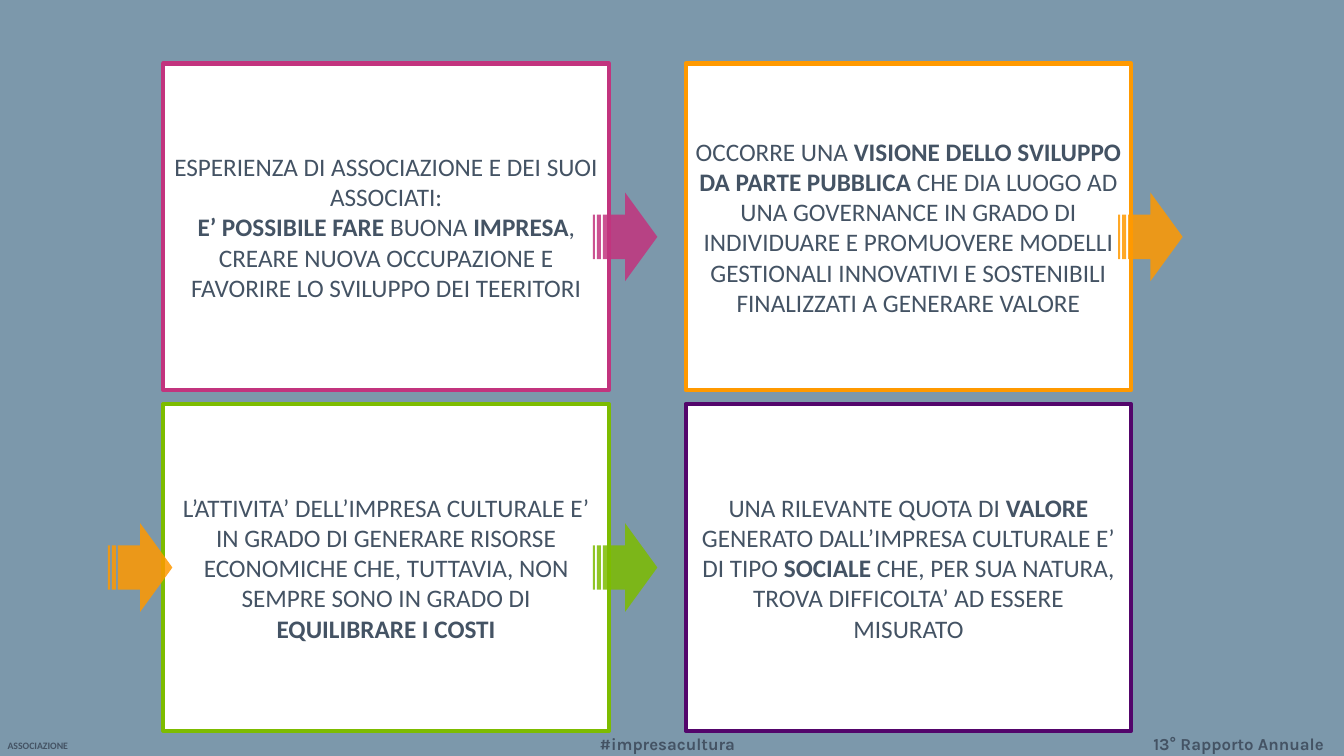
from lxml.etree import SubElement
from pptx import Presentation
from pptx.dml.color import RGBColor
from pptx.enum.shapes import MSO_SHAPE
from pptx.enum.text import MSO_ANCHOR, MSO_AUTO_SIZE, PP_ALIGN
from pptx.oxml.ns import qn
from pptx.util import Inches, Pt

# Palette
BACKGROUND, WHITE, TEXT = "7C98AB", "FFFFFF", "445364"
PINK, ORANGE, GREEN, PURPLE = "C2347E", "FF9900", "7DBC00", "53056B"

# Grid of cards, in inches
GRID_LEFT, GRID_TOP = 1.62, 0.63
CARD_WIDTH, CARD_HEIGHT = 4.42, 3.24
COLUMN_STEP, ROW_STEP = 5.18, 3.38

# Arrows, in inches
ARROW_WIDTH, ARROW_HEIGHT = 0.64, 0.88
ARROW_TOPS = (1.91, 5.19)

# Cards: column, row, outline colour, paragraphs of (text, bold)
CARDS = [
    (0, 0, PINK, [
        [("ESPERIENZA DI ASSOCIAZIONE E DEI SUOI ASSOCIATI:", False)],
        [("E’ POSSIBILE FARE", True), (" BUONA ", False), ("IMPRESA", True),
         (", CREARE NUOVA OCCUPAZIONE E FAVORIRE LO SVILUPPO DEI TEERITORI", False)],
    ]),
    (1, 0, ORANGE, [
        [("OCCORRE UNA ", False),
         ("VISIONE DELLO SVILUPPO DA PARTE PUBBLICA", True),
         (" CHE DIA LUOGO AD UNA GOVERNANCE IN GRADO DI INDIVIDUARE E PROMUOVERE "
          "MODELLI GESTIONALI INNOVATIVI E SOSTENIBILI FINALIZZATI A GENERARE VALORE",
          False)],
    ]),
    (0, 1, GREEN, [
        [("L’ATTIVITA’ DELL’IMPRESA CULTURALE E’ IN GRADO DI GENERARE RISORSE "
          "ECONOMICHE CHE, TUTTAVIA, NON SEMPRE SONO IN GRADO DI ", False),
         ("EQUILIBRARE I COSTI", True)],
    ]),
    (1, 1, PURPLE, [
        [("UNA RILEVANTE QUOTA DI ", False), ("VALORE", True),
         (" GENERATO DALL’IMPRESA CULTURALE E’ DI TIPO ", False), ("SOCIALE ", True),
         ("CHE, PER SUA NATURA, TROVA DIFFICOLTA’ AD ESSERE MISURATO", False)],
    ]),
]

# Arrows: left edge, row, colour
ARROWS = [(5.88, 0, PINK), (11.09, 0, ORANGE), (1.07, 1, ORANGE), (5.88, 1, GREEN)]

# Footers: text, left, top, width, height, size, font, alignment, wrap
FOOTERS = [
    ("ASSOCIAZIONE", -0.1, 7.29, 0.95, 0.22, 7, "Calibri", PP_ALIGN.CENTER, True),
    ("13° Rapporto Annuale", 11.34, 7.23, 2.05, 0.3, 12, "Karla", PP_ALIGN.LEFT, False),
    ("#impresacultura", 5.85, 7.23, 1.63, 0.3, 12, "Karla", PP_ALIGN.LEFT, False),
]


def paint(color_format, color):
    color_format.rgb = RGBColor.from_string(color)


def fill_solid(fill, color):
    fill.solid()
    paint(fill.fore_color, color)


def add_run(paragraph, text, size, font_name, bold):
    run = paragraph.add_run()
    run.text = text
    run.font.size = Pt(size)
    run.font.name = font_name
    run.font.bold = bold
    paint(run.font.color, TEXT)


def add_filled_shape(slide, kind, left, top, width, height, color):
    shape = slide.shapes.add_shape(
        kind, Inches(left), Inches(top), Inches(width), Inches(height))
    shape.shadow.inherit = False
    fill_solid(shape.fill, color)
    return shape


def add_card(slide, column, row, outline, paragraphs):
    card = add_filled_shape(
        slide, MSO_SHAPE.RECTANGLE, GRID_LEFT + column * COLUMN_STEP,
        GRID_TOP + row * ROW_STEP, CARD_WIDTH, CARD_HEIGHT, WHITE)
    paint(card.line.color, outline)
    card.line.width = Pt(3)
    frame = card.text_frame
    frame.word_wrap = True
    frame.vertical_anchor = MSO_ANCHOR.MIDDLE
    for index, runs in enumerate(paragraphs):
        paragraph = frame.add_paragraph() if index else frame.paragraphs[0]
        paragraph.alignment = PP_ALIGN.CENTER
        for text, bold in runs:
            add_run(paragraph, text, 18, "Calibri", bold)


def add_arrow(slide, left, row, color):
    arrow = add_filled_shape(
        slide, MSO_SHAPE.STRIPED_RIGHT_ARROW, left, ARROW_TOPS[row],
        ARROW_WIDTH, ARROW_HEIGHT, color)
    arrow.line.fill.background()
    # 85 % opacity
    fill_color = arrow.fill._xPr.find(qn("a:solidFill"))[0]
    SubElement(fill_color, qn("a:alpha")).set("val", "85000")


def add_footer(slide, text, left, top, width, height, size, font_name, alignment, wrap):
    box = slide.shapes.add_textbox(
        Inches(left), Inches(top), Inches(width), Inches(height))
    frame = box.text_frame
    frame.word_wrap = wrap
    frame.auto_size = MSO_AUTO_SIZE.SHAPE_TO_FIT_TEXT
    paragraph = frame.paragraphs[0]
    paragraph.alignment = alignment
    add_run(paragraph, text, size, font_name, True)


def main():
    presentation = Presentation()
    presentation.slide_width = Inches(13.33)
    presentation.slide_height = Inches(7.5)
    slide = presentation.slides.add_slide(presentation.slide_layouts[6])
    fill_solid(slide.background.fill, BACKGROUND)

    for footer in FOOTERS:
        add_footer(slide, *footer)
    for card in CARDS:
        add_card(slide, *card)
    for arrow in ARROWS:
        add_arrow(slide, *arrow)

    presentation.save("out.pptx")


if __name__ == "__main__":
    main()
